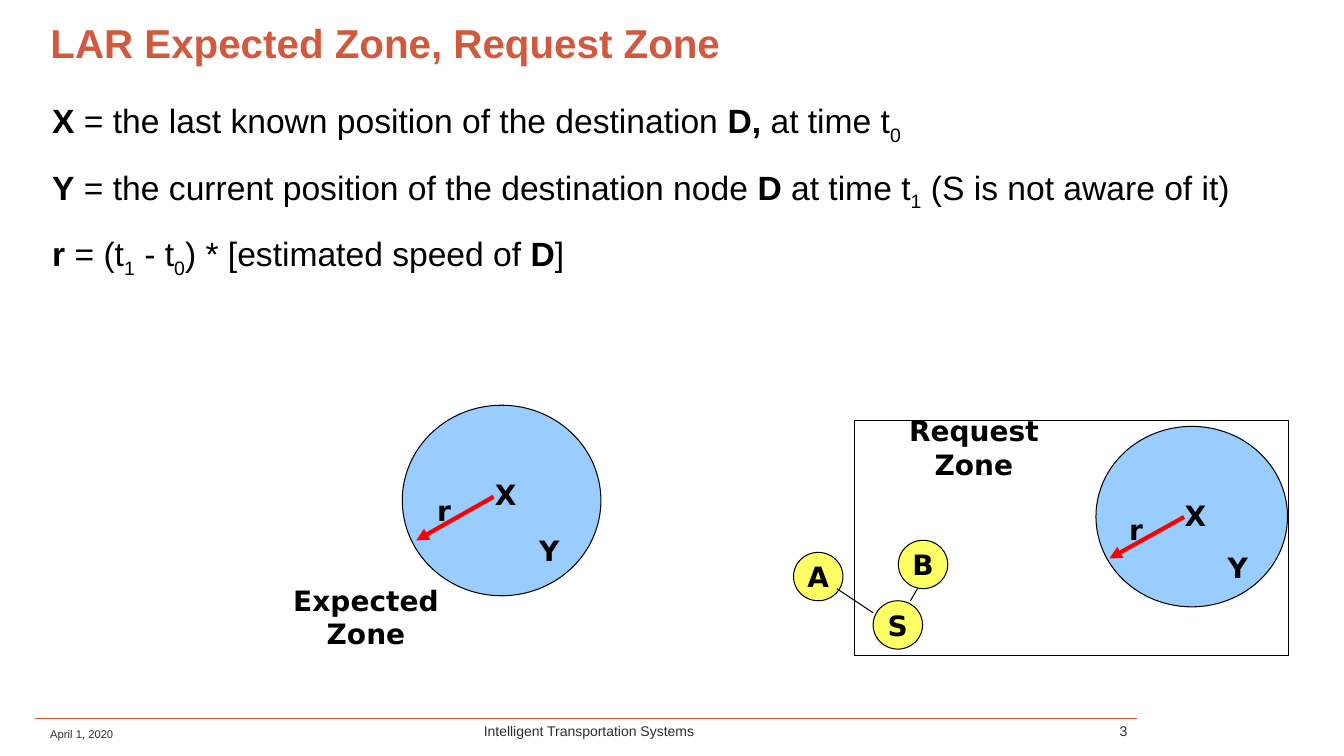
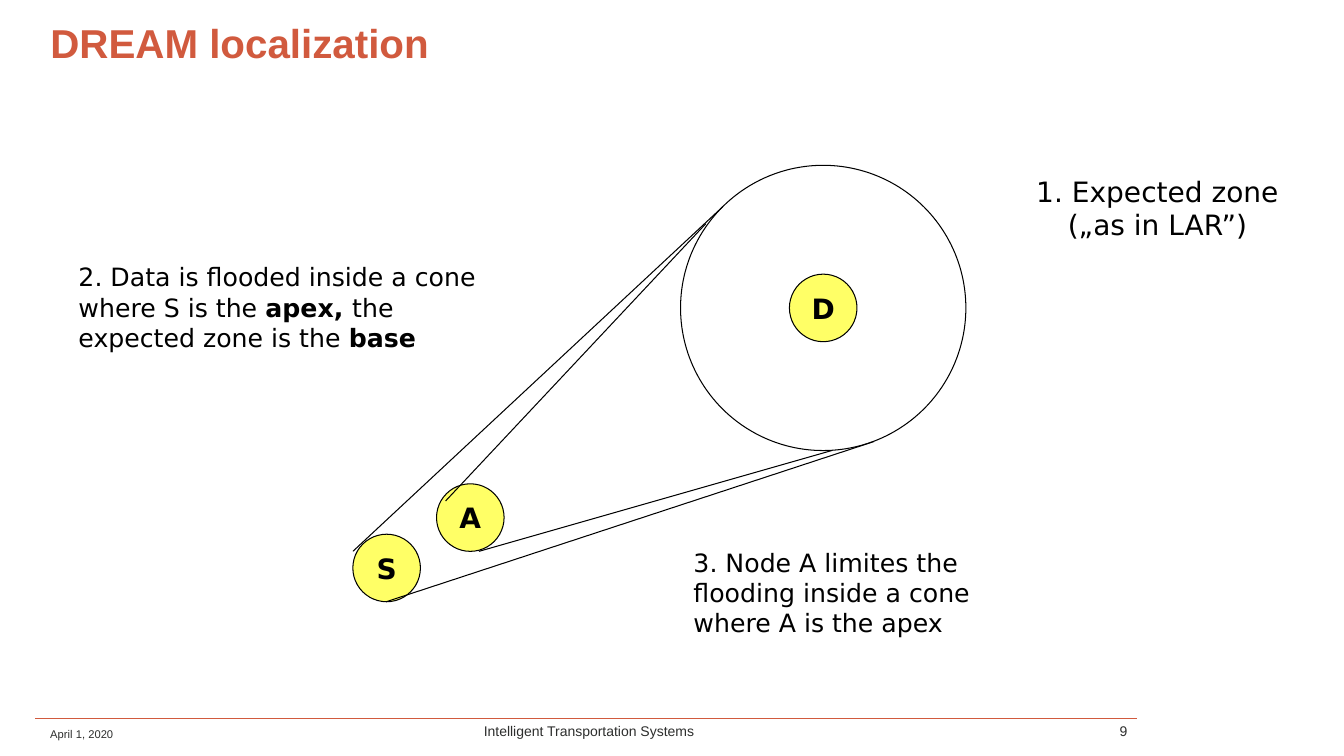
"""Build two slides on location-based ad hoc routing."""
from lxml.etree import SubElement
from pptx import Presentation
from pptx.dml.color import RGBColor
from pptx.enum.shapes import MSO_CONNECTOR, MSO_SHAPE
from pptx.enum.text import MSO_ANCHOR, MSO_AUTO_SIZE, PP_ALIGN
from pptx.oxml.ns import qn
from pptx.util import Inches, Pt

COLORS = {
    "accent": "D15A3E",
    "footer": "2D2E2D",
    "text": "000000",
    "zone": "99CCFF",
    "node": "FFFF66",
    "radius": "FF0000",
}


def color(name):
    return RGBColor.from_string(COLORS[name])


class RoutingDeck:
    heading_font = "Arial"
    diagram_font = "DejaVu Sans"

    def __init__(self):
        self.deck = Presentation()
        self.deck.slide_width = Inches(13.33)
        self.deck.slide_height = Inches(7.5)
        self.page = None

    def add_page(self, title, number):
        self.page = self.deck.slides.add_slide(self.deck.slide_layouts[5])
        self.line((0.35, 7.13), (11.28, 7.13), "accent", 1)
        box = self.page.shapes.title
        box.left, box.top = Inches(0.4), Inches(0.17)
        box.width, box.height = Inches(12.58), Inches(0.57)
        self.fill_text(box, [title], 28.8, self.heading_font, "accent", True,
                       PP_ALIGN.LEFT)
        box.text_frame.paragraphs[0].line_spacing = 0.9
        footers = (
            ("April 1, 2020", 0.4, 1.46, 0.3, 8, PP_ALIGN.LEFT),
            ("Intelligent Transportation Systems", 1.88, 7.92, 0.24, 10, PP_ALIGN.CENTER),
            (str(number), 10.28, 1, 0.24, 10, PP_ALIGN.RIGHT),
        )
        for text, left, width, height, size, align in footers:
            self.text((left, 7.13, width, height), [text], size,
                      self.heading_font, "footer", align=align)

    def fill_text(self, box, paragraphs, size, font, ink="text", bold=False,
                  align=PP_ALIGN.LEFT, anchor=MSO_ANCHOR.MIDDLE, wrap=True):
        frame = box.text_frame
        frame.word_wrap = wrap
        frame.auto_size = MSO_AUTO_SIZE.NONE
        frame.vertical_anchor = anchor
        for index, content in enumerate(paragraphs):
            para = frame.add_paragraph() if index else frame.paragraphs[0]
            para.alignment = align
            para.font.size = Pt(size)
            para.font.name = font
            para.font.bold = bold
            para.font.color.rgb = color(ink)
            spans = [(content, "")] if isinstance(content, str) else content
            for text, style in spans:
                if style == "break":
                    para.add_line_break()
                    continue
                span = para.add_run()
                span.text = text
                if style == "bold":
                    span.font.bold = True
                elif style == "sub":
                    span.font._element.set("baseline", "-25000")
        return frame

    def text(self, area, paragraphs, size, font, ink="text", **options):
        box = self.page.shapes.add_textbox(*map(Inches, area))
        return self.fill_text(box, paragraphs, size, font, ink, **options)

    def body(self, paragraphs):
        frame = self.text((0.42, 0.95, 12.56, 5.93), paragraphs, 24,
                          self.heading_font, anchor=MSO_ANCHOR.TOP)
        for index, para in enumerate(frame.paragraphs):
            para.line_spacing = 0.9
            if index:
                para.space_before = Pt(18)

    def note(self, area, paragraphs, size=18, align=PP_ALIGN.LEFT):
        self.text(area, paragraphs, size, self.diagram_font, align=align)

    def label(self, text, center_x, center_y, width=0.6, height=0.44):
        area = (center_x - width / 2, center_y - height / 2, width, height)
        self.text(area, [text], 20, self.diagram_font, bold=True,
                  align=PP_ALIGN.CENTER)

    def outline(self, area, preset=MSO_SHAPE.OVAL, fill=None):
        shape = self.page.shapes.add_shape(preset, *map(Inches, area))
        shape.shadow.inherit = False
        if fill:
            shape.fill.solid()
            shape.fill.fore_color.rgb = color(fill)
        else:
            shape.fill.background()
        shape.line.color.rgb = color("text")
        shape.line.width = Pt(0.75)
        return shape

    def node(self, name, left, top, width, height):
        shape = self.outline((left, top, width, height), fill="node")
        self.fill_text(shape, [name], 20, self.diagram_font, bold=True,
                       align=PP_ALIGN.CENTER, wrap=False)

    def line(self, start, end, ink="text", width=0.75, arrow=False):
        connector = self.page.shapes.add_connector(
            MSO_CONNECTOR.STRAIGHT, *map(Inches, start + end))
        connector.line.color.rgb = color(ink)
        connector.line.width = Pt(width)
        properties = connector._element.spPr
        if arrow:
            SubElement(properties.find(qn("a:ln")), qn("a:tailEnd"), type="triangle")
        SubElement(properties, qn("a:effectLst"))

    def expected_zone(self, left, top, width, height, marks_top):
        def place(across, down):
            return left + across * width, marks_top + down * height

        self.outline((left, top, width, height), fill="zone")
        self.label("X", *place(0.52, 0.47))
        self.label("Y", *place(0.74, 0.76))
        self.line(place(0.46, 0.48), place(0.07, 0.71), "radius", 3, arrow=True)
        self.label("r", *place(0.21, 0.55))

    def save(self):
        self.deck.save("out.pptx")


def add_request_zone(deck):
    deck.add_page("LAR Expected Zone, Request Zone", 3)
    deck.body([
        [("X", "bold"), (" = the last known position of the destination ", ""),
         ("D, ", "bold"), ("at time t", ""), ("0", "sub")],
        [("Y", "bold"), (" = the current position of the destination node ", ""),
         ("D", "bold"), (" at time t", ""), ("1", "sub"),
         (" (S is not aware of it)", "")],
        [("r", "bold"), (" = (t", ""), ("1", "sub"), (" - t", ""), ("0", "sub"),
         (") * [estimated speed of ", ""), ("D", "bold"), ("]", "")],
    ])
    deck.expected_zone(3.99, 4.02, 1.97, 1.89, marks_top=4.02)
    deck.label("Expected Zone", 3.63, 6.12, 1.9, 0.78)
    deck.expected_zone(10.87, 4.23, 1.9, 1.79, marks_top=4.27)
    deck.outline((8.48, 4.17, 4.3, 2.33), MSO_SHAPE.RECTANGLE)
    deck.label("Request Zone", 9.66, 4.44, 1.96, 0.78)
    for name, left, top in (("S", 8.66, 5.96), ("B", 8.91, 5.36), ("A", 7.87, 5.48)):
        deck.node(name, left, top, 0.49, 0.48)
    deck.line((8.3, 5.84), (8.66, 6.08))
    deck.line((9.1, 5.84), (9.03, 5.96))


def add_dream(deck):
    deck.add_page("DREAM localization", 9)
    deck.note((10.17, 1.67, 2.62, 0.78), ["1. Expected zone", "(„as in LAR”)"],
              20, PP_ALIGN.CENTER)
    deck.note((6.78, 5.37, 3.43, 1.01),
              ["3. Node A limites the flooding inside a cone where A is the apex"])
    deck.note((0.68, 2.54, 4.52, 1.01), [[
        ("2. Data is flooded inside a cone", ""), ("", "break"),
        ("where S is the ", ""), ("apex, ", "bold"),
        ("the expected zone is the ", ""), ("base", "bold")]])
    deck.outline((6.75, 1.64, 2.83, 2.83))
    for name, left, top in (("S", 3.5, 5.3), ("D", 7.83, 2.72), ("A", 4.33, 4.8)):
        deck.node(name, left, top, 0.67, 0.67)
    for start, end in (
        ((3.83, 5.97), (8.67, 4.38)),
        ((3.5, 5.47), (7.17, 2.05)),
        ((4.42, 4.97), (7, 2.22)),
        ((4.75, 5.47), (8.25, 4.47)),
    ):
        deck.line(start, end)


def main():
    deck = RoutingDeck()
    add_request_zone(deck)
    add_dream(deck)
    deck.save()


if __name__ == "__main__":
    main()
